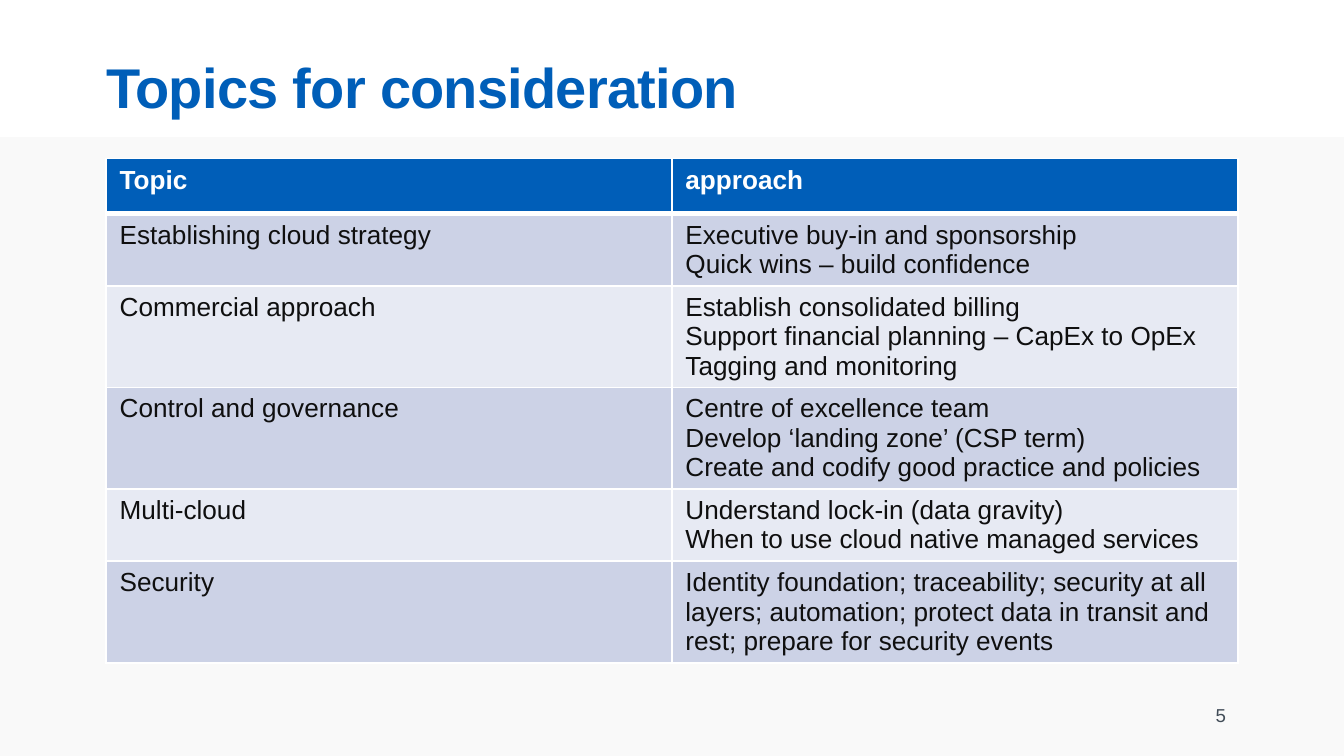
from lxml import etree
from pptx import Presentation
from pptx.dml.color import RGBColor
from pptx.enum.shapes import MSO_SHAPE
from pptx.enum.text import MSO_ANCHOR, PP_ALIGN
from pptx.oxml.ns import qn
from pptx.util import Inches, Pt

RECT = MSO_SHAPE.RECTANGLE
TOP, MIDDLE = MSO_ANCHOR.TOP, MSO_ANCHOR.MIDDLE
LEFT, RIGHT = PP_ALIGN.LEFT, PP_ALIGN.RIGHT
COLORS = {
    "blue": "005EB8",
    "white": "FFFFFF",
    "panel": "F9F9F9",
    "dark": "CCD2E6",
    "light": "E7EAF3",
    "ink": "0F0F0F",
    "gray": "424D58",
}
ROWS = [
    ("Topic", ["approach"]),
    ("Establishing cloud strategy", [
        "Executive buy-in and sponsorship",
        "Quick wins – build confidence",
    ]),
    ("Commercial approach", [
        "Establish consolidated billing",
        "Support financial planning – CapEx to OpEx",
        "Tagging and monitoring",
    ]),
    ("Control and governance", [
        "Centre of excellence team",
        "Develop ‘landing zone’ (CSP term)",
        "Create and codify good practice and policies",
    ]),
    ("Multi-cloud", [
        "Understand lock-in (data gravity)",
        "When to use cloud native managed services",
    ]),
    ("Security", [
        "Identity foundation; traceability; security at all layers; "
        "automation; protect data in transit and rest; "
        "prepare for security events",
    ]),
]


def add_run(para, text, size, color, bold=False):
    run = para.add_run()
    run.text = text
    run.font.name = "Arial"
    run.font.size = Pt(size)
    run.font.bold = bold
    run.font.color.rgb = RGBColor.from_string(COLORS[color])
    return run


def add_edge(cell, side, width):
    edge = etree.SubElement(cell._tc.get_or_add_tcPr(), qn(f"a:ln{side}"), w=str(Pt(width)))
    fill = etree.SubElement(edge, qn("a:solidFill"))
    etree.SubElement(fill, qn("a:srgbClr"), val=COLORS["white"])


deck = Presentation()
deck.slide_width = Inches(10)
deck.slide_height = Inches(10 * 9 / 16)
slide = deck.slides.add_slide(deck.slide_layouts[5])

edge = Inches(1.02)
panel = slide.shapes.add_shape(RECT, 0, edge, deck.slide_width, deck.slide_height - edge)
panel.shadow.inherit = False
panel.fill.solid()
panel.fill.fore_color.rgb = RGBColor.from_string(COLORS["panel"])
panel.line.fill.background()

title = slide.shapes.title
title.left, title.top = Inches(0.79), Inches(0.39)
title.width, title.height = Inches(8.35), Inches(0.58)
frame = title.text_frame
frame.margin_left = frame.margin_right = frame.margin_top = frame.margin_bottom = 0
frame.vertical_anchor = TOP
para = frame.paragraphs[0]
para.alignment = LEFT
run = add_run(para, "Topics for consideration", 30, "blue", True)
run.font._element.set("spc", "-40")

table = slide.shapes.add_table(
    len(ROWS), 2, Inches(0.79), Inches(1.18), Inches(8.42), Inches(0.41 * len(ROWS))
).table
for r, (topic, steps) in enumerate(ROWS):
    head = r == 0
    shade = "blue" if head else "dark" if r % 2 else "light"
    for c, lines in enumerate([[topic], steps]):
        cell = table.cell(r, c)
        for side in "LRTB":
            thick = (r, side) in [(0, "B"), (1, "T")]
            add_edge(cell, side, 3 if thick else 1)
        cell.fill.solid()
        cell.fill.fore_color.rgb = RGBColor.from_string(COLORS[shade])
        frame = cell.text_frame
        for i, line in enumerate(lines):
            para = frame.add_paragraph() if i else frame.paragraphs[0]
            add_run(para, line, 14, "white" if head else "ink", head)

box = slide.shapes.add_textbox(Inches(6.89), Inches(5.17), Inches(2.33), Inches(0.3))
frame = box.text_frame
frame.word_wrap = True
frame.vertical_anchor = MIDDLE
para = frame.paragraphs[0]
para.alignment = RIGHT
add_run(para, "5", 10, "gray")

deck.save("out.pptx")
